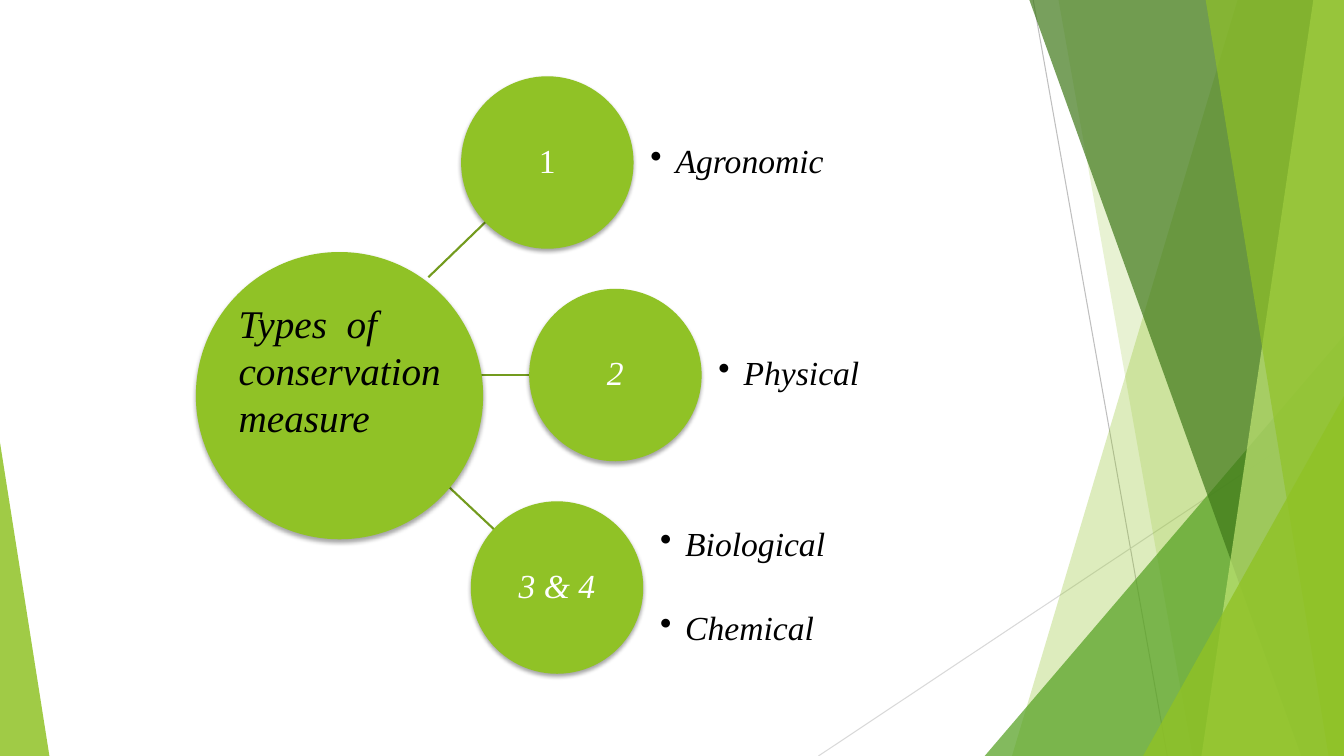
from lxml import etree
from pptx import Presentation
from pptx.dml.color import RGBColor
from pptx.enum import shapes, text
from pptx.oxml import ns
from pptx.util import Pt

WIDTH, HEIGHT = 960, 540
TOP = -0.6
FONT = "Times New Roman"
GREEN, BRANCH, BLACK, WHITE = "90C226", "739B1E", "000000", "FFFFFF"

# start, end, colour
HAIRLINES = [
    ((738, 0), (833.8, HEIGHT), "BFBFBF"),
    ((WIDTH, 290.2), (584.6, HEIGHT), "D9D9D9"),
]
# "band": x at the top, x at the bottom; "triangle": left, top, width, apex
FACETS = [
    ("band", (884.2, 722.9), GREEN, 30),
    ("band", (756, 851.8), GREEN, 20),
    ("triangle", (703.4, 239.8, 256.6, 1), "54A021", 72),
    ("band", (735.1, 929.5), "3F7819", 70),
    ("band", (938.2, 858.2), "C0E474", 70),
    ("band", (861.1, 949), GREEN, 65),
    ("triangle", (816.5, 283, 143.5, 1), GREEN, 80),
    ("triangle", (0, 316.1, 35.3, 0), GREEN, 85),
]

HUB = (139.9, 180, 205.2)  # left, top, diameter
HUB_LINES = ["Types  of", "conservation measure"]
HUB_LABEL = (163.4, 210.2, 161.3, 143.3)

# number, italic, circle left, branch start, branch end, measures
TYPES = [
    ("1", False, 329.4, (306, 198), (347, 158.4), ["Agronomic"]),
    ("2", True, 378, (306, 267.8), (378, 267.8), ["Physical"]),
    ("3 & 4", True, 336.3, (306, 334.1), (352.8, 378), ["Biological", "Chemical"]),
]
NODE, NODE_TOP, NODE_STEP = 123.2, 54.5, 151.8
LIST_GAP, LIST_WIDTH, BULLET_INDENT = 12, 184.3, 18
MEASURE_GAP = 34.5


def rgb(value):
    return RGBColor.from_string(value)


def child(parent, tag, **attributes):
    return etree.SubElement(parent, ns.qn(tag), attributes)


def paint(shape, colour, opacity=100):
    """Give a flat fill without outline or shadow."""
    shape.shadow.inherit = False
    shape.fill.solid()
    shape.fill.fore_color.rgb = rgb(colour)
    shape.line.fill.background()
    if opacity < 100:
        tint = shape._element.spPr.find(".//" + ns.qn("a:srgbClr"))
        child(tint, "a:alpha", val=str(opacity * 1000))


def add_line(page, start, end, colour, weight):
    line = page.shapes.add_connector(
        shapes.MSO_CONNECTOR.STRAIGHT, *(Pt(v) for v in start + end))
    line.line.color.rgb = rgb(colour)
    line.line.width = Pt(weight)
    child(line._element.spPr, "a:effectLst")


def add_facet(page, kind, geometry, colour, opacity):
    if kind == "band":
        top_x, bottom_x = geometry
        builder = page.shapes.build_freeform(Pt(top_x), Pt(TOP))
        corners = [(WIDTH, TOP), (WIDTH, HEIGHT), (bottom_x, HEIGHT)]
        builder.add_line_segments([(Pt(x), Pt(y)) for x, y in corners])
        facet = builder.convert_to_shape()
    else:
        left, top, width, apex = geometry
        facet = page.shapes.add_shape(
            shapes.MSO_SHAPE.ISOSCELES_TRIANGLE,
            Pt(left), Pt(top), Pt(width), Pt(HEIGHT - top))
        facet.adjustments[0] = apex
    paint(facet, colour, opacity)


def add_circle(page, left, top, diameter):
    circle = page.shapes.add_shape(
        shapes.MSO_SHAPE.OVAL, Pt(left), Pt(top), Pt(diameter), Pt(diameter))
    paint(circle, GREEN)
    effects = circle._element.spPr.find(ns.qn("a:effectLst"))
    shadow = child(effects, "a:outerShdw", blurRad=str(Pt(3)), dist=str(Pt(2)),
                   dir="5400000", rotWithShape="0")
    child(child(shadow, "a:srgbClr", val=BLACK), "a:alpha", val="35000")
    return circle


def set_frame(box, margin, anchor):
    frame = box.text_frame
    frame.word_wrap = True
    frame.vertical_anchor = anchor
    frame.margin_left = frame.margin_right = Pt(margin)
    frame.margin_top = frame.margin_bottom = Pt(margin)
    return frame


def add_span(para, words, size, colour, italic=True):
    span = para.add_run()
    span.text = words
    span.font.name = FONT
    span.font.size = Pt(size)
    span.font.italic = italic
    span.font.color.rgb = rgb(colour)


def add_bullet(para):
    properties = para._p.get_or_add_pPr()
    properties.set("marL", str(Pt(BULLET_INDENT)))
    properties.set("indent", str(-Pt(BULLET_INDENT)))
    child(properties, "a:buChar", char="•")


def add_hub_label(page):
    box = page.shapes.add_textbox(*(Pt(v) for v in HUB_LABEL))
    frame = box.text_frame
    frame.word_wrap = True
    for index, words in enumerate(HUB_LINES):
        para = frame.add_paragraph() if index else frame.paragraphs[0]
        add_span(para, words, 28, BLACK)


def add_type(page, number, italic, left, top, measures):
    """Add a numbered circle and the bulleted measures beside it."""
    frame = set_frame(add_circle(page, left, top, NODE), 1.4, text.MSO_ANCHOR.MIDDLE)
    para = frame.paragraphs[0]
    para.alignment = text.PP_ALIGN.CENTER
    para.line_spacing = 0.9
    add_span(para, number, 24, WHITE, italic)

    box = page.shapes.add_textbox(
        Pt(left + NODE + LIST_GAP), Pt(top), Pt(LIST_WIDTH), Pt(NODE))
    frame = set_frame(box, 0, text.MSO_ANCHOR.MIDDLE)
    for index, measure in enumerate(measures):
        para = frame.add_paragraph() if index else frame.paragraphs[0]
        para.line_spacing = 0.9
        if index:
            para.space_before = Pt(MEASURE_GAP)
        add_bullet(para)
        add_span(para, measure, 24, BLACK)


def main():
    deck = Presentation()
    deck.slide_width, deck.slide_height = Pt(WIDTH), Pt(HEIGHT)
    page = deck.slides.add_slide(deck.slide_layouts[6])

    for start, end, colour in HAIRLINES:
        add_line(page, start, end, colour, 0.75)
    for facet in FACETS:
        add_facet(page, *facet)

    for _, _, _, start, end, _ in TYPES:
        add_line(page, start, end, BRANCH, 1.5)
    add_circle(page, *HUB)
    for row, (number, italic, left, _, _, measures) in enumerate(TYPES):
        add_type(page, number, italic, left, NODE_TOP + row * NODE_STEP, measures)
    add_hub_label(page)

    deck.save("out.pptx")


if __name__ == "__main__":
    main()
